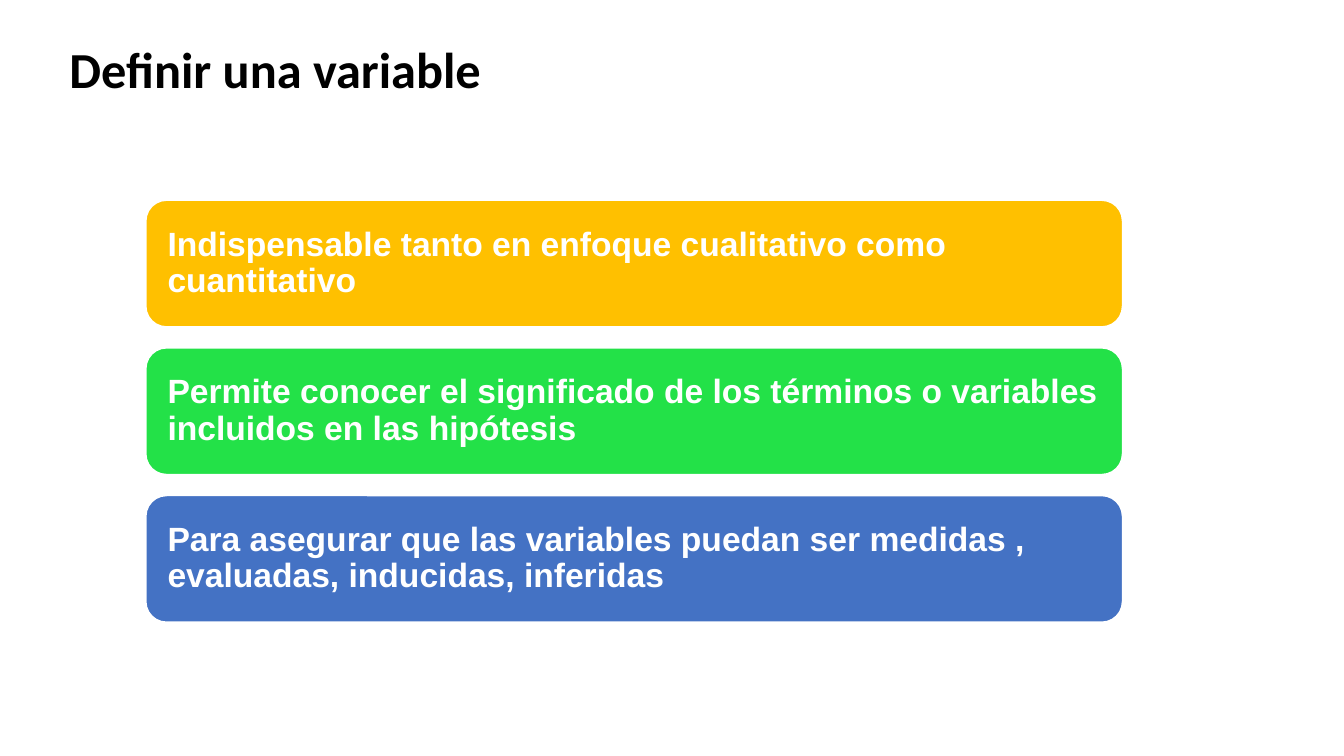
from pptx import Presentation
from pptx.dml.color import RGBColor
from pptx.enum.shapes import MSO_SHAPE
from pptx.enum.text import MSO_ANCHOR, PP_ALIGN
from pptx.util import Inches, Pt

ROUNDED = MSO_SHAPE.ROUNDED_RECTANGLE
MIDDLE = MSO_ANCHOR.MIDDLE
LEFT = PP_ALIGN.LEFT

BLACK = RGBColor(0x00, 0x00, 0x00)
WHITE = RGBColor(0xFF, 0xFF, 0xFF)
AMBER = RGBColor(0xFF, 0xC0, 0x00)
GREEN = RGBColor(0x23, 0xE1, 0x48)
BLUE = RGBColor(0x44, 0x72, 0xC4)

TITLE_FONT = {"name": "Calibri", "size": Pt(36), "bold": True}
REASON_FONT = {"name": "Arial", "size": Pt(24), "bold": True}
REASON_FRAME = {
    "word_wrap": True,
    "vertical_anchor": MIDDLE,
    "margin_left": Inches(0.16),
    "margin_right": Inches(0.16),
    "margin_top": Inches(0.16),
    "margin_bottom": Inches(0.16),
}

REASONS = [
    ("Indispensable tanto en enfoque cualitativo como cuantitativo", AMBER),
    ("Permite conocer el significado de los términos o variables "
     "incluidos en las hipótesis", GREEN),
    ("Para asegurar que las variables puedan ser medidas , "
     "evaluadas, inducidas, inferidas", BLUE),
]
FIRST_REASON_TOP = 1.98
REASON_PITCH = 1.465


def apply_format(target, values):
    for attribute, value in values.items():
        setattr(target, attribute, value)


def write_text(frame, text, font_format, color):
    paragraph = frame.paragraphs[0]
    paragraph.alignment = LEFT
    run = paragraph.add_run()
    run.text = text
    apply_format(run.font, font_format)
    run.font.color.rgb = color
    return paragraph


def add_title(slide, text):
    title = slide.shapes.add_textbox(
        Inches(0.59), Inches(0.33), Inches(6.57), Inches(0.71))
    title.text_frame.word_wrap = True
    write_text(title.text_frame, text, TITLE_FONT, BLACK)


def add_reason(slide, top, text, fill_color):
    reason = slide.shapes.add_shape(
        ROUNDED, Inches(1.44), Inches(top), Inches(9.7), Inches(1.27))
    reason.shadow.inherit = False
    reason.fill.solid()
    reason.fill.fore_color.rgb = fill_color
    reason.line.color.rgb = WHITE
    reason.line.width = Pt(2)
    apply_format(reason.text_frame, REASON_FRAME)
    paragraph = write_text(reason.text_frame, text, REASON_FONT, WHITE)
    paragraph.line_spacing = 0.9


def main():
    presentation = Presentation()
    presentation.slide_width = Inches(13.33)
    presentation.slide_height = Inches(7.5)
    slide = presentation.slides.add_slide(presentation.slide_layouts[6])

    for row, (text, fill_color) in enumerate(REASONS):
        add_reason(slide, FIRST_REASON_TOP + row * REASON_PITCH, text, fill_color)
    add_title(slide, "Definir una variable")

    presentation.save("out.pptx")


if __name__ == "__main__":
    main()
